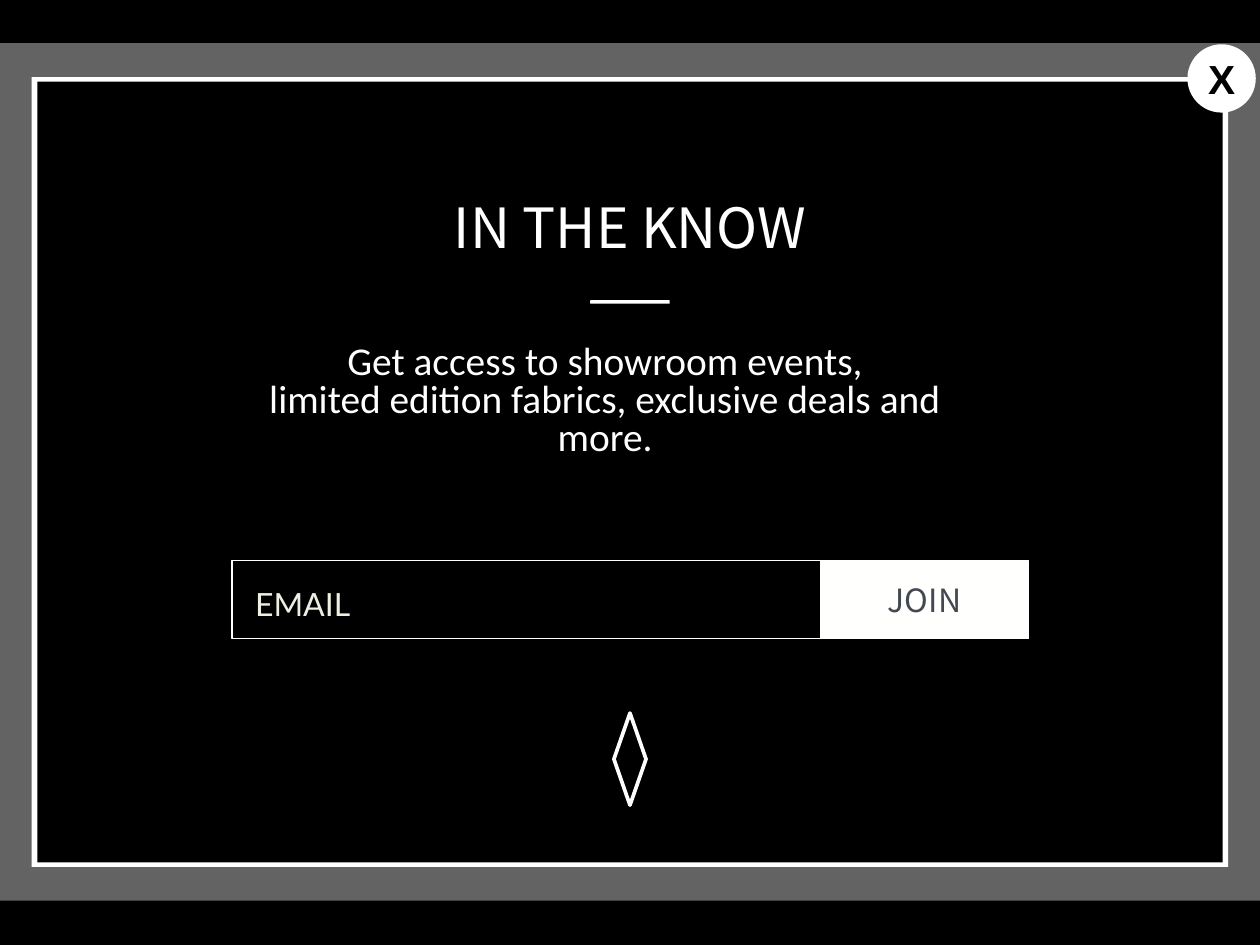
from pptx import Presentation
from pptx.dml.color import RGBColor
from pptx.enum.shapes import MSO_SHAPE
from pptx.enum.text import MSO_ANCHOR, PP_ALIGN
from pptx.util import Cm, Pt

WIDE, HIGH = 36.12, 27.1
WHITE, BLACK, GREY = "FFFFFF", "000000", "636363"


def paint(item, color):
    item.solid()
    item.fore_color.rgb = RGBColor.from_string(color)


def add_box(slide, kind, box, fill=None, line=None, width=1):
    shape = slide.shapes.add_shape(kind, *map(Cm, box))
    shape.shadow.inherit = False
    if fill:
        paint(shape.fill, fill)
    else:
        shape.fill.background()
    if line:
        paint(shape.line.fill, line)
        shape.line.width = Pt(width)
    else:
        shape.line.fill.background()
    return shape


def write(shape, lines, size, font, color, bold=False, space=1.0):
    frame = shape.text_frame
    frame.word_wrap = True
    frame.vertical_anchor = MSO_ANCHOR.MIDDLE
    frame.margin_left = frame.margin_right = 0
    frame.margin_top = frame.margin_bottom = 0
    for i, line in enumerate(lines):
        para = frame.add_paragraph() if i else frame.paragraphs[0]
        para.alignment = PP_ALIGN.CENTER
        para.line_spacing = space
        run = para.add_run()
        run.text = line
        run.font.size = Pt(size)
        run.font.name = font
        run.font.bold = bold
        paint(run.font.fill, color)


def add_text(slide, box, lines, *style, **extra):
    write(slide.shapes.add_textbox(*map(Cm, box)), lines, *style, **extra)


def add_frame(slide, box):
    left, top, width, height = box
    add_box(slide, MSO_SHAPE.RECTANGLE, box, GREY)
    for dx, dy, color in ((0.91, 0.97, WHITE), (1.07, 1.1, BLACK)):
        inner = (left + dx, top + dy, width - 2 * dx, height - 2 * dy)
        add_box(slide, MSO_SHAPE.RECTANGLE, inner, color)


def add_intro(slide, box):
    left, top, width, height = box
    add_text(slide, (left, top, width, 2.24), ["IN THE KNOW"],
             45, "Noto Sans CJK KR", WHITE)
    rule = (left + width / 2 - 1.14, top + 3.25, 2.28, 0.1)
    add_box(slide, MSO_SHAPE.ROUNDED_RECTANGLE, rule, WHITE)
    body = (left + 0.82, top + 5.08, width - 3.06, height - 5.08)
    lines = ["Get access to showroom events,",
             "limited edition fabrics, exclusive deals and more."]
    add_text(slide, body, lines, 32, "Calibri", WHITE, space=0.8)


def add_form(slide, box):
    left, top, width, height = box
    field = width - 5.97
    add_box(slide, MSO_SHAPE.RECTANGLE, (left, top, field, height), line=WHITE)
    add_text(slide, (left, top + 0.1, 4.06, height), ["EMAIL"],
             26, "Lato", "EEEFE0")
    join = add_box(slide, MSO_SHAPE.RECTANGLE,
                   (left + field, top, 5.97, height), "FFFFFE", WHITE)
    write(join, ["JOIN"], 26, "Noto Sans CJK SC", "444850")


def add_close(slide, box):
    badge = add_box(slide, MSO_SHAPE.OVAL, box, WHITE)
    write(badge, ["X"], 33, "Arial", BLACK, bold=True)


def main():
    deck = Presentation()
    deck.slide_width, deck.slide_height = Cm(WIDE), Cm(HIGH)
    slide = deck.slides.add_slide(deck.slide_layouts[6])
    paint(slide.background.fill, BLACK)
    add_frame(slide, (0, 1.24, WIDE, 24.59))
    add_box(slide, MSO_SHAPE.DIAMOND, (17.6, 20.45, 0.92, 2.64),
            line=WHITE, width=3)
    add_intro(slide, (6.63, 5.36, 22.86, 7.26))
    add_form(slide, (6.65, 16.08, 22.84, 2.24))
    add_close(slide, (34.04, 1.27, 1.96, 1.96))
    deck.save("out.pptx")


if __name__ == "__main__":
    main()
